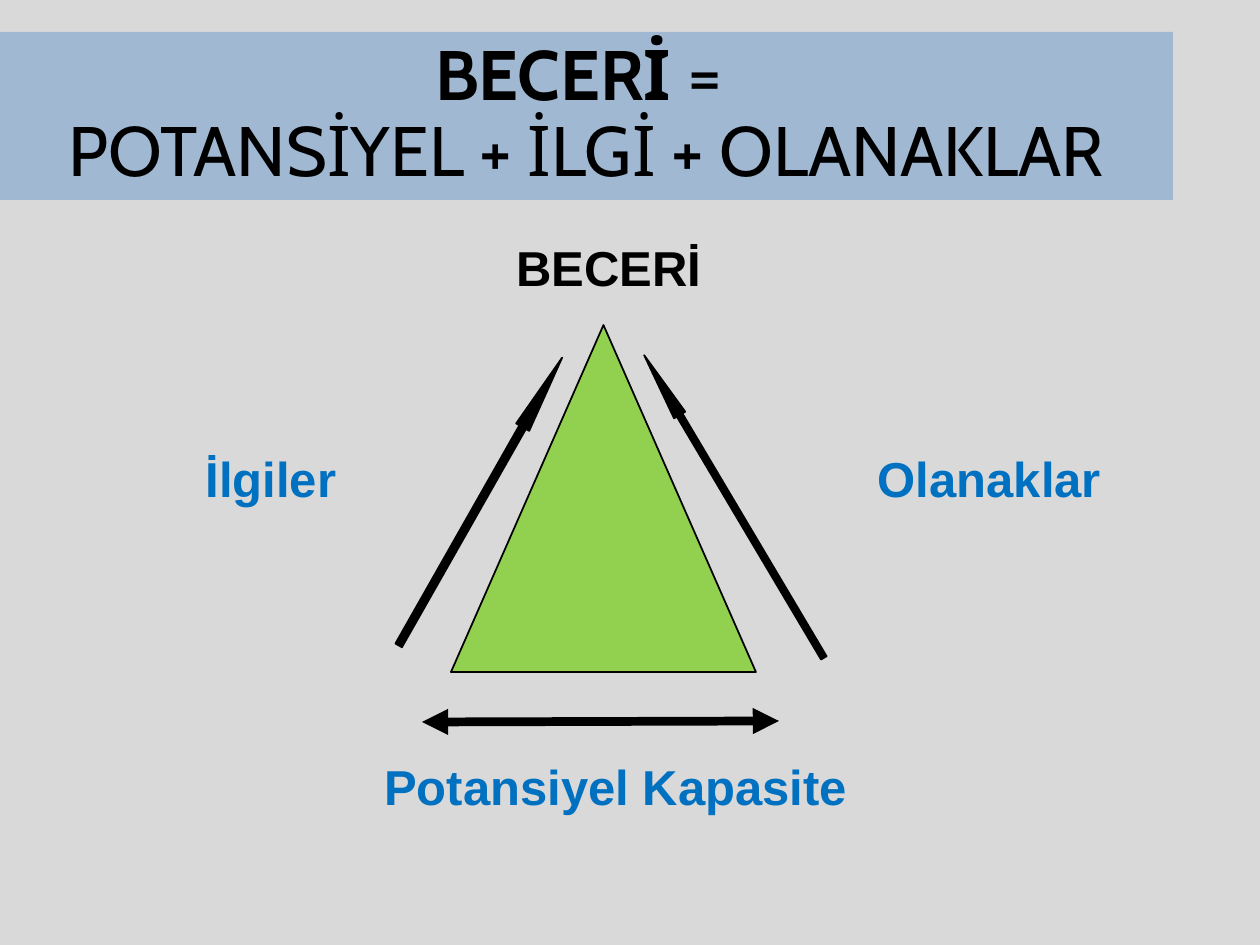
"""Build the skill triangle slide."""
from dataclasses import dataclass

from lxml import etree
from pptx import Presentation
from pptx import util as u
from pptx.dml.color import RGBColor
from pptx.enum import shapes, text
from pptx.oxml.ns import qn

BLACK = RGBColor(0x00, 0x00, 0x00)
BLUE = RGBColor(0x00, 0x70, 0xC0)
GREEN = RGBColor(0x92, 0xD0, 0x50)
BAND = RGBColor(0xA1, 0xB8, 0xD3)
GREY = RGBColor(0xD9, 0xD9, 0xD9)
KIND = shapes.MSO_SHAPE
ALIGN = text.PP_ALIGN


@dataclass
class Label:
    words: str
    box: tuple[int, int, int, int]
    color: RGBColor = BLUE
    align: ALIGN = ALIGN.LEFT


@dataclass
class Solid:
    kind: KIND
    box: tuple[int, int, int, int]
    fill: RGBColor = BLACK
    turn: float = 0
    adjust: tuple[float, ...] = ()


LABELS = [
    Label("BECERİ", (504, 231, 220, 72), BLACK),
    Label("İlgiler", (123, 442, 296, 72), align=ALIGN.CENTER),
    Label("Potansiyel Kapasite", (372, 750, 496, 72)),
    Label("Olanaklar", (769, 442, 441, 72), align=ALIGN.CENTER),
]
SOLIDS = [
    Solid(KIND.ISOSCELES_TRIANGLE, (451, 325, 305, 347), GREEN),
    Solid(KIND.RIGHT_ARROW, (315, 494, 331, 15), turn=299.6, adjust=(0.5, 5.34)),
    Solid(KIND.RIGHT_ARROW, (558, 500, 352, 13), turn=239.3, adjust=(0.5, 5.35)),
]


def px(*values: int) -> list[int]:
    """Turn pixels into EMU."""
    return [round(value * u.Inches(1) / 126) for value in values]


def style(item, **values) -> None:
    """Set every given attribute on an item."""
    for name, value in values.items():
        setattr(item, name, value)


def write(line, words: str, color: RGBColor, **values) -> None:
    """Add a formatted run to a paragraph."""
    run = line.add_run()
    run.text = words
    style(run.font, **values)
    run.font.color.rgb = color


def head(slide) -> None:
    """Fill the title band."""
    band = slide.shapes.title
    style(band, **dict(zip(("left", "top", "width", "height"), px(0, 32, 1173, 168))))
    band.fill.solid()
    band.fill.fore_color.rgb = BAND
    frame = band.text_frame
    style(frame, word_wrap=True, auto_size=text.MSO_AUTO_SIZE.NONE,
          vertical_anchor=text.MSO_ANCHOR.MIDDLE)
    line = frame.paragraphs[0]
    style(line, alignment=ALIGN.CENTER, line_spacing=0.9)
    face = {"name": "Cabin", "size": u.Pt(40)}
    write(line, "BECERİ", BLACK, bold=True, **face)
    write(line, " = ", BLACK, bold=False, **face)
    line.add_line_break()
    write(line, "POTANSİYEL + İLGİ + OLANAKLAR", BLACK, bold=False, **face)


def label(slide, item: Label) -> None:
    """Draw one text label."""
    frame = slide.shapes.add_textbox(*px(*item.box)).text_frame
    style(frame, word_wrap=True, auto_size=text.MSO_AUTO_SIZE.SHAPE_TO_FIT_TEXT)
    line = frame.paragraphs[0]
    line.alignment = item.align
    write(line, item.words, item.color, name="Arial", size=u.Pt(28), bold=True)


def solid(slide, item: Solid) -> None:
    """Draw one filled shape with a thin outline."""
    shape = slide.shapes.add_shape(item.kind, *px(*item.box))
    shape.shadow.inherit = False
    shape.rotation = item.turn
    for index, value in enumerate(item.adjust):
        shape.adjustments[index] = value
    shape.fill.solid()
    shape.fill.fore_color.rgb = item.fill
    shape.line.color.rgb = BLACK
    shape.line.width = u.Pt(1)


def base(slide) -> None:
    """Draw the two-headed arrow under the triangle."""
    link = slide.shapes.add_connector(
        shapes.MSO_CONNECTOR.STRAIGHT, *px(422, 722, 779, 721))
    link.line.color.rgb = BLACK
    link.line.width = u.Pt(5)
    for tag in ("a:headEnd", "a:tailEnd"):
        etree.SubElement(link.line._get_or_add_ln(), qn(tag), type="triangle")
    etree.SubElement(link._element.spPr, qn("a:effectLst"))


def main() -> None:
    """Build and save the slide."""
    deck = Presentation()
    deck.slide_width, deck.slide_height = px(1260, 945)
    slide = deck.slides.add_slide(deck.slide_layouts[5])
    slide.background.fill.solid()
    slide.background.fill.fore_color.rgb = GREY
    head(slide)
    for item in SOLIDS:
        solid(slide, item)
    for item in LABELS:
        label(slide, item)
    base(slide)
    deck.save("out.pptx")


if __name__ == "__main__":
    main()
